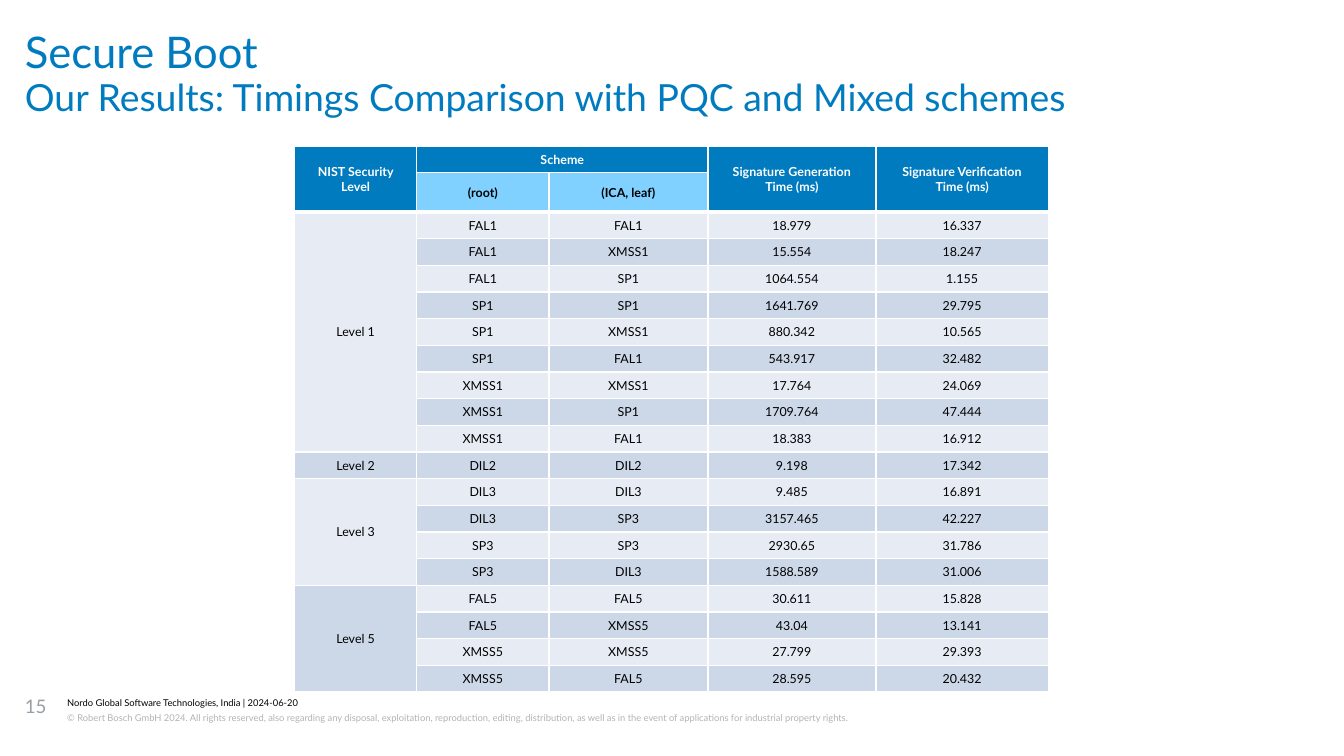
"""Build the Secure Boot timing comparison slide."""
from lxml.etree import SubElement
from pptx import Presentation
from pptx.dml.color import RGBColor
from pptx.enum.text import MSO_ANCHOR as Anchor, PP_ALIGN as Align
from pptx.oxml.ns import qn
from pptx.util import Pt

BLUE, SKY, WHITE, BLACK = "007BC0", "80D1FF", "FFFFFF", "000000"
BANDS = "E7ECF4", "CCD7E8"
COLUMN_WIDTHS = 78.5, 85, 102.2, 108, 110.9
ROW_HEIGHT, SUBHEADER_HEIGHT = 17.15, 10.1

LEVELS = {
    "Level 1": [
        ("FAL1", "FAL1", "18.979", "16.337"),
        ("FAL1", "XMSS1", "15.554", "18.247"),
        ("FAL1", "SP1", "1064.554", "1.155"),
        ("SP1", "SP1", "1641.769", "29.795"),
        ("SP1", "XMSS1", "880.342", "10.565"),
        ("SP1", "FAL1", "543.917", "32.482"),
        ("XMSS1", "XMSS1", "17.764", "24.069"),
        ("XMSS1", "SP1", "1709.764", "47.444"),
        ("XMSS1", "FAL1", "18.383", "16.912"),
    ],
    "Level 2": [("DIL2", "DIL2", "9.198", "17.342")],
    "Level 3": [
        ("DIL3", "DIL3", "9.485", "16.891"),
        ("DIL3", "SP3", "3157.465", "42.227"),
        ("SP3", "SP3", "2930.65", "31.786"),
        ("SP3", "DIL3", "1588.589", "31.006"),
    ],
    "Level 5": [
        ("FAL5", "FAL5", "30.611", "15.828"),
        ("FAL5", "XMSS5", "43.04", "13.141"),
        ("XMSS5", "XMSS5", "27.799", "29.393"),
        ("XMSS5", "FAL5", "28.595", "20.432"),
    ],
}
HEADERS = [
    (0, 0, 2, 1, "NIST Security Level", BLUE, WHITE),
    (0, 1, 1, 2, "Scheme", BLUE, WHITE),
    (0, 3, 2, 1, "Signature Generation\nTime (ms)", BLUE, WHITE),
    (0, 4, 2, 1, "Signature Verification\nTime (ms)", BLUE, WHITE),
    (1, 1, 1, 1, "(root)", SKY, BLACK),
    (1, 2, 1, 1, "(ICA, leaf)", SKY, BLACK),
]


def rgb(value):
    """Turn a hex string into a colour."""
    return RGBColor.from_string(value)


class SlideBuilder:
    """Hold the text style and the current slide."""

    font_name = "Lato"

    def __init__(self, slide):
        """Keep the slide to build on."""
        self.slide = slide

    def fill_text(self, frame, text, size, color, bold=False, align=Align.LEFT, spacing=None):
        """Fill a text frame with evenly styled paragraphs."""
        frame.text = text
        for paragraph in frame.paragraphs:
            paragraph.alignment = align
            if spacing:
                paragraph.line_spacing = spacing
            font = paragraph.font
            font.name, font.size, font.bold = self.font_name, Pt(size), bold
            font.color.rgb = rgb(color)

    def place(self, shape, box, text, size, color, spacing=None):
        """Position a text shape without margins and fill it."""
        shape.left, shape.top, shape.width, shape.height = map(Pt, box)
        frame = shape.text_frame
        frame.word_wrap = True
        frame.vertical_anchor = Anchor.TOP
        frame.margin_left = frame.margin_right = frame.margin_top = frame.margin_bottom = 0
        self.fill_text(frame, text, size, color, spacing=spacing)

    def title(self, *args, **style):
        """Format the title placeholder."""
        self.place(self.slide.shapes.title, *args, **style)

    def text(self, box, *args, **style):
        """Add a text box."""
        self.place(self.slide.shapes.add_textbox(*map(Pt, box)), box, *args, **style)

    def table(self, left, top, widths, heights):
        """Add a table with the given column widths and row heights."""
        size = map(Pt, (left, top, sum(widths), sum(heights)))
        table = self.slide.shapes.add_table(len(heights), len(widths), *size).table
        for column, width in zip(table.columns, widths):
            column.width = Pt(width)
        for row, height in zip(table.rows, heights):
            row.height = Pt(height)
        return table

    def borders(self, cell, top=1, bottom=1):
        """Draw white borders around a cell."""
        properties = cell._tc.get_or_add_tcPr()
        for position, (side, width) in enumerate(zip("LRTB", (1, 1, top, bottom))):
            line = properties.makeelement(qn(f"a:ln{side}"), w=str(Pt(width)))
            fill = SubElement(line, qn("a:solidFill"))
            SubElement(fill, qn("a:srgbClr"), val=WHITE)
            properties.insert(position, line)

    def cell(self, table, row, column, text, fill, color=BLACK, bold=False, span=(1, 1)):
        """Fill one cell, merged over its span of rows and columns."""
        cell = table.cell(row, column)
        if span != (1, 1):
            cell.merge(table.cell(row + span[0] - 1, column + span[1] - 1))
        cell.fill.solid()
        cell.fill.fore_color.rgb = rgb(fill)
        cell.vertical_anchor = Anchor.MIDDLE
        cell.margin_left = cell.margin_right = Pt(6.5)
        cell.margin_top = cell.margin_bottom = Pt(3)
        self.fill_text(cell.text_frame, text, 8, color, bold, Align.CENTER)
        ends_header = bold and row + span[0] == 2
        self.borders(cell, 3 if row == 2 else 1, 3 if ends_header else 1)


def main():
    """Build and save the slide."""
    deck = Presentation()
    deck.slide_width, deck.slide_height = Pt(864), Pt(486)
    builder = SlideBuilder(deck.slides.add_slide(deck.slide_layouts[5]))

    builder.text((43.2, 447.8, 718.6, 8.6),
                 "Nordo Global Software Technologies, India | 2024-06-20", 6, BLACK, spacing=1.07)
    builder.text((43.2, 456.5, 718.6, 17.3),
                 "© Robert Bosch GmbH 2024. All rights reserved, also regarding any disposal, "
                 "exploitation, reproduction, editing, distribution, as well as in the event of "
                 "applications for industrial property rights.", 6, "B2B3B5", spacing=1.2)
    builder.title((16, 51, 831.6, 31),
                  "Our Results: Timings Comparison with PQC and Mixed schemes", 24, BLUE, spacing=0.89)
    builder.text((16, 20, 831.6, 31), "Secure Boot", 28, BLUE, spacing=0.89)
    builder.text((16, 446.4, 23, 32.4), "15", 12, "999FA6")

    timing_count = sum(map(len, LEVELS.values()))
    heights = [ROW_HEIGHT, SUBHEADER_HEIGHT] + [ROW_HEIGHT] * timing_count
    table = builder.table(189.4, 93.9, COLUMN_WIDTHS, heights)
    for row, column, rows, columns, label, fill, color in HEADERS:
        builder.cell(table, row, column, label, fill, color, True, (rows, columns))
    row = 2
    for level_index, (level, timings) in enumerate(LEVELS.items()):
        builder.cell(table, row, 0, level, BANDS[level_index % 2], span=(len(timings), 1))
        for timing in timings:
            for column, value in enumerate(timing, 1):
                builder.cell(table, row, column, value, BANDS[row % 2])
            row += 1

    deck.save("out.pptx")


if __name__ == "__main__":
    main()
